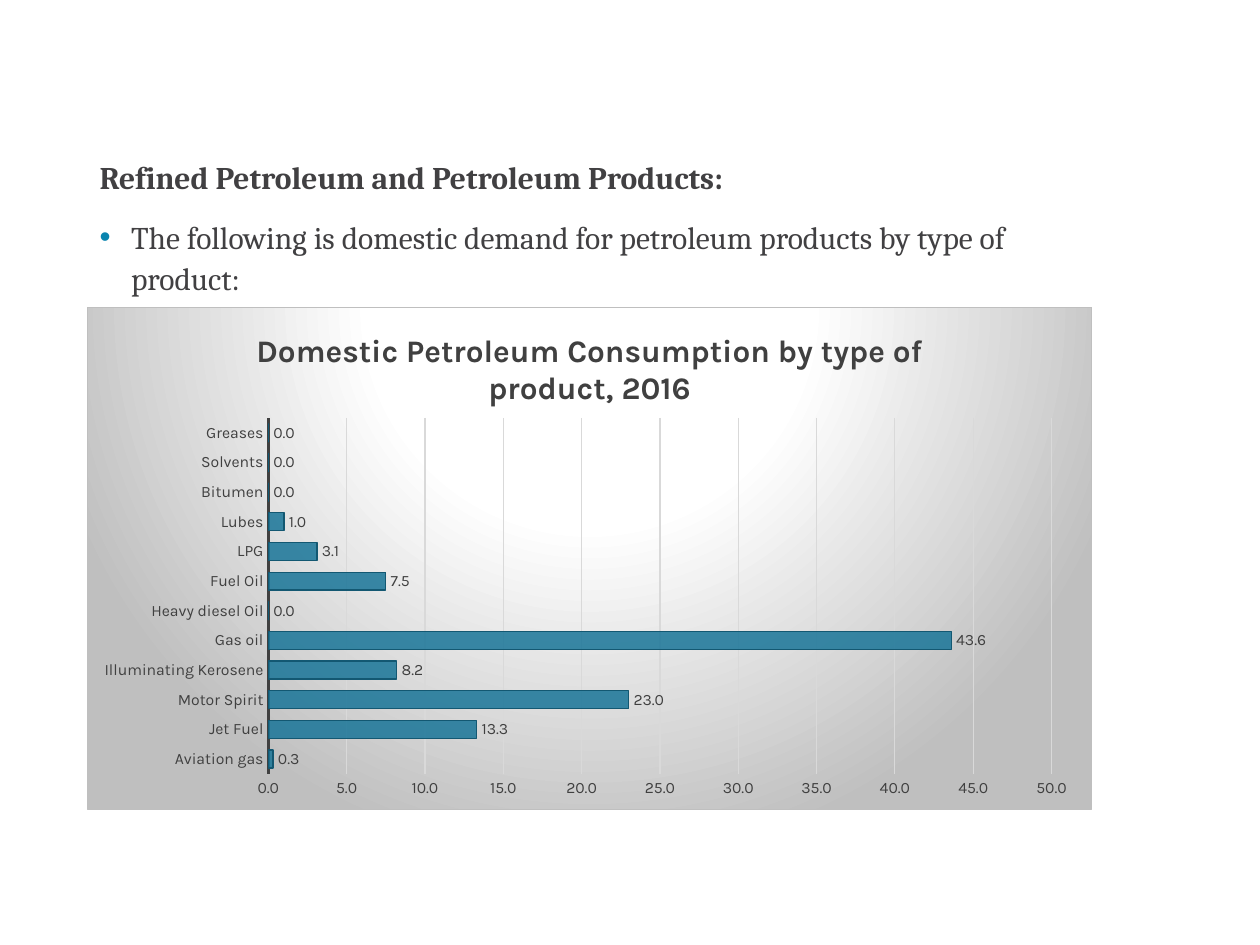
from dataclasses import dataclass

from lxml import etree
from pptx import Presentation
from pptx.chart.data import CategoryChartData
from pptx.dml.color import RGBColor
from pptx.enum.chart import XL_CHART_TYPE, XL_LABEL_POSITION, XL_TICK_MARK
from pptx.enum.text import MSO_AUTO_SIZE
from pptx.oxml import parse_xml
from pptx.oxml.ns import nsdecls, qn
from pptx.util import Inches, Pt

BARS = XL_CHART_TYPE.BAR_CLUSTERED
OUTER = XL_LABEL_POSITION.OUTSIDE_END
NO_TICK = XL_TICK_MARK.NONE
NO_FIT = MSO_AUTO_SIZE.NONE

HEAD = "Refined Petroleum and Petroleum Products:"
POINT = "The following is domestic demand for petroleum products by type of product:"
TITLE = "Domestic Petroleum Consumption by type of product, 2016"
DEMAND = {
    "Aviation gas": 0.3, "Jet Fuel": 13.3, "Motor Spirit": 23,
    "Illuminating Kerosene": 8.2, "Gas oil": 43.6, "Heavy diesel Oil": 0,
    "Fuel Oil": 7.5, "LPG": 3.1, "Lubes": 1, "Bitumen": 0,
    "Solvents": 0, "Greases": 0,
}


@dataclass
class Theme:
    serif: str = "Cambria"
    sans: str = "Karla"
    text: str = "414042"
    label: str = "404040"
    bullet: str = "0984AF"
    bar: str = "197598"
    edge: str = "135872"
    grid: str = "D9D9D9"
    light: str = "FFFFFF"
    shade: str = "BFBFBF"
    large: int = 18
    small: int = 9


class Deck:
    def __init__(self, theme):
        self.theme = theme
        self.deck = Presentation()
        self.deck.slide_width = Inches(10)
        self.deck.slide_height = Inches(7.5)
        self.slide = self.deck.slides.add_slide(self.deck.slide_layouts[1])
        title = self.slide.shapes.title.element
        title.getparent().remove(title)

    def area(self, left, top, width, height):
        """Turn shares of the slide into lengths."""
        wide, high = self.deck.slide_width, self.deck.slide_height
        return (int(left * wide), int(top * high),
                int(width * wide), int(height * high))

    def style(self, font, size, color, name, bold=False):
        font.size, font.name, font.bold = Pt(size), name, bold
        font.color.rgb = RGBColor.from_string(color)

    def stroke(self, line, color, width):
        line.color.rgb = RGBColor.from_string(color)
        line.width = Pt(width)

    def body(self, box, head, point):
        look = self.theme
        shape = self.slide.placeholders[1]
        shape.left, shape.top, shape.width, shape.height = self.area(*box)
        frame = shape.text_frame
        frame.word_wrap, frame.auto_size = True, NO_FIT
        frame.text = head
        frame.add_paragraph().text = point
        for para, bold in zip(frame.paragraphs, (True, False)):
            self.mark(para, not bold)
            para.line_spacing = 1.1
            para.space_before = Pt(0 if bold else 10)
            self.style(para.runs[0].font, look.large, look.text, look.serif, bold)

    def mark(self, para, shown):
        props = para._p.get_or_add_pPr()
        indent = Inches(0.25) if shown else 0
        props.set("marL", str(indent))
        props.set("indent", str(-indent))
        if not shown:
            etree.SubElement(props, qn("a:buNone"))
            return
        tint = etree.SubElement(props, qn("a:buClr"))
        etree.SubElement(tint, qn("a:srgbClr"), val=self.theme.bullet)
        etree.SubElement(props, qn("a:buFont"), typeface="Arial")
        etree.SubElement(props, qn("a:buChar"), char="•")

    def chart(self, box, title, values):
        look = self.theme
        data = CategoryChartData(number_format="0.0")
        data.categories = list(values)
        data.add_series("Series 1", list(values.values()))
        chart = self.slide.shapes.add_chart(BARS, *self.area(*box), data).chart
        self.style(chart.font, 10, "000000", look.sans)
        chart.has_legend = False

        # Title
        chart.has_title = True
        frame = chart.chart_title.text_frame
        frame.text = title
        self.style(frame.paragraphs[0].runs[0].font,
                   look.large, look.label, look.sans, True)
        chart.chart_title.include_in_layout = False

        # Axes
        names, scale = chart.category_axis, chart.value_axis
        for axis in (names, scale):
            axis.major_tick_mark = axis.minor_tick_mark = NO_TICK
            self.style(axis.tick_labels.font, look.small, look.label, look.sans)
        self.stroke(names.format.line, look.label, 1.5)
        scale.minimum_scale, scale.maximum_scale, scale.major_unit = 0, 50, 5
        scale.tick_labels.number_format = "0.0"
        scale.tick_labels.number_format_is_linked = False
        scale.format.line.fill.background()
        scale.has_major_gridlines = True
        self.stroke(scale.major_gridlines.format.line, look.grid, 0.75)

        # Bars and their values
        plot = chart.plots[0]
        plot.gap_width, plot.vary_by_categories = 65, False
        bars = plot.series[0]
        bars.format.fill.solid()
        bars.format.fill.fore_color.rgb = RGBColor.from_string(look.bar)
        tint = next(bars.format.fill._xPr.iter(qn("a:srgbClr")))
        etree.SubElement(tint, qn("a:alpha"), val="85000")
        self.stroke(bars.format.line, look.edge, 0.75)
        plot.has_data_labels = True
        labels = plot.data_labels
        labels.show_value, labels.position = True, OUTER
        labels.number_format, labels.number_format_is_linked = "0.0", False
        self.style(labels.font, look.small, look.label, look.sans)

        self.place(chart, x=0.18, y=0.22, w=0.78, h=0.71)
        self.glow(chart)

    def place(self, chart, **shares):
        """Fix the inner plot area as shares of the chart."""
        plot = next(chart.element.iter(qn("c:plotArea")))
        for old in plot.findall(qn("c:layout")):
            plot.remove(old)
        parts = "".join(f'<c:{key}Mode val="edge"/>' for key in "xy")
        parts += "".join(f'<c:{key} val="{val}"/>' for key, val in shares.items())
        plot.insert(0, parse_xml(
            f'<c:layout {nsdecls("c")}><c:manualLayout>'
            f'<c:layoutTarget val="inner"/>{parts}'
            '</c:manualLayout></c:layout>'))

    def glow(self, chart):
        """Give the chart a round gradient and a thin border."""
        look = self.theme
        stops = "".join(
            f'<a:gs pos="{pos}000"><a:srgbClr val="{color}"/></a:gs>'
            for pos, color in ((0, look.light), (39, look.light), (100, look.shade)))
        chart.element.find(qn("c:chart")).addnext(parse_xml(
            f'<c:spPr {nsdecls("c", "a")}><a:gradFill><a:gsLst>{stops}</a:gsLst>'
            '<a:path path="circle"><a:fillToRect l="50000" t="-80000" '
            'r="50000" b="180000"/></a:path></a:gradFill>'
            f'<a:ln w="{Pt(0.75)}"><a:solidFill><a:srgbClr val="{look.shade}"/>'
            '</a:solidFill></a:ln></c:spPr>'))


def main():
    deck = Deck(Theme())
    deck.body((0.069, 0.157, 0.75, 0.483), HEAD, POINT)
    deck.chart((0.069, 0.325, 0.798, 0.532), TITLE, DEMAND)
    deck.deck.save("out.pptx")


if __name__ == "__main__":
    main()
